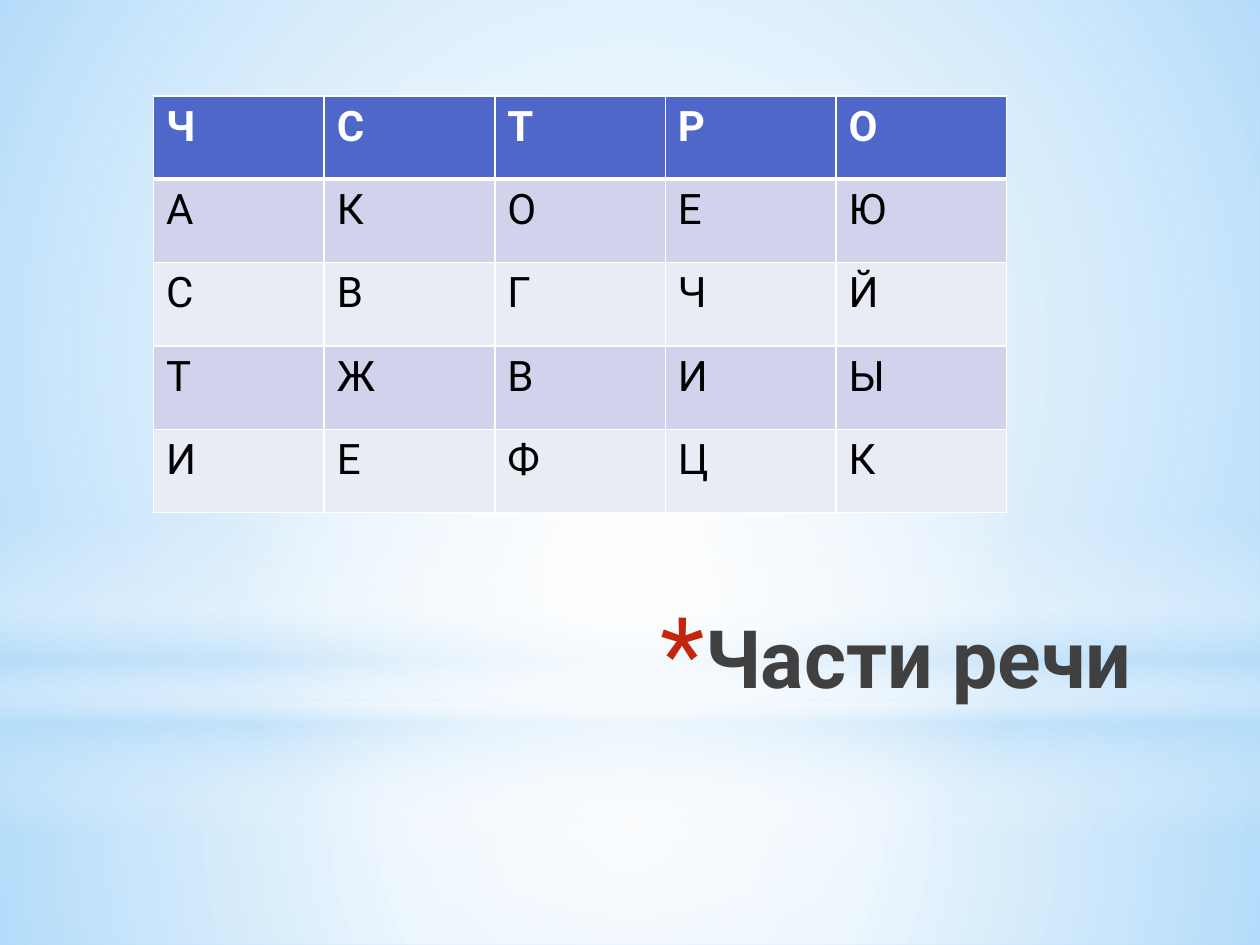
from lxml import etree
from pptx import Presentation
from pptx.dml.color import RGBColor
from pptx.enum import shapes, text
from pptx.oxml import ns
from pptx.util import Pt

LETTERS = ["ЧСТРО", "АКОЕЮ", "СВГЧЙ", "ТЖВИЫ", "ИЕФЦК"]
TITLE = "Части речи"

WHITE = RGBColor(0xFF, 0xFF, 0xFF)
BLACK = RGBColor(0, 0, 0)
SKY = RGBColor(0xB4, 0xDC, 0xFA)
GREY = RGBColor(0x40, 0x40, 0x40)
RED = RGBColor(0xC3, 0x26, 0x0C)
HEADER = RGBColor(0x4E, 0x67, 0xC8)
BANDS = [RGBColor(0xE9, 0xEB, 0xF5), RGBColor(0xD0, 0xD3, 0xEB)]

FONT = "Roboto"
WIDTH, HEIGHT = 720, 540
HORIZON = 401.75
RECT, OVAL = shapes.MSO_SHAPE.RECTANGLE, shapes.MSO_SHAPE.OVAL
# preset, top, height, radial, stops of (position %, colour, opacity %)
BACKDROP = [
    (RECT, HORIZON, HEIGHT - HORIZON, True,
     [(0, WHITE, 91), (37, WHITE, 76), (100, SKY, 79)]),
    (RECT, 0, HORIZON, True,
     [(0, WHITE, 89), (48, WHITE, 62), (100, SKY, 79)]),
    (RECT, 296.64, 180, False,
     [(0, WHITE, 0), (29, WHITE, 30), (45, SKY, 40),
      (55, WHITE, 26), (65, SKY, 60), (100, WHITE, 0)]),
    (OVAL, 126, HORIZON, True, [(0, WHITE, 100), (56, WHITE, 0)]),
]
TABLE_LEFT, TABLE_TOP = 87.75, 54.75
COLUMN_WIDTH, ROW_HEIGHT = 97.5, 47.67


def add(parent, tag, **attributes):
    return etree.SubElement(parent, ns.qn(tag), attributes)


def fill_gradient(shape, stops, radial):
    shape.fill.background()
    properties = shape._element.spPr
    empty = properties.find(ns.qn("a:noFill"))
    gradient = etree.Element(ns.qn("a:gradFill"), rotWithShape="1")
    stop_list = add(gradient, "a:gsLst")
    for position, colour, opacity in stops:
        stop = add(stop_list, "a:gs", pos=str(position * 1000))
        shade = add(stop, "a:srgbClr", val=str(colour))
        add(shade, "a:alpha", val=str(opacity * 1000))
    if radial:
        centre = add(gradient, "a:path", path="circle")
        add(centre, "a:fillToRect", l="50000", t="50000", r="50000", b="50000")
    else:
        add(gradient, "a:lin", ang="5400000", scaled="0")
    properties.replace(empty, gradient)


def write(frame, words, size, colour, bold=False, align=text.PP_ALIGN.LEFT):
    paragraph = frame.paragraphs[0]
    paragraph.alignment = align
    run = paragraph.add_run()
    run.text = words
    run.font.name = FONT
    run.font.size = Pt(size)
    run.font.bold = bold
    run.font.color.rgb = colour
    return paragraph


def add_bullet(paragraph, mark, colour, percent, indent):
    properties = paragraph._p.get_or_add_pPr()
    properties.set("marL", str(Pt(indent)))
    properties.set("indent", str(-Pt(indent)))
    add(add(properties, "a:buClr"), "a:srgbClr", val=str(colour))
    add(properties, "a:buSzPct", val=str(percent * 1000))
    add(properties, "a:buFont", typeface=FONT)
    add(properties, "a:buChar", char=mark)


def draw_borders(cell, **widths):
    properties = cell._tc.get_or_add_tcPr()
    for side in "LRTB":
        line = add(properties, "a:ln" + side, w=str(Pt(widths.get(side, 1))))
        add(add(line, "a:solidFill"), "a:srgbClr", val=str(WHITE))


def main():
    deck = Presentation()
    deck.slide_width, deck.slide_height = Pt(WIDTH), Pt(HEIGHT)
    slide = deck.slides.add_slide(deck.slide_layouts[6])
    slide.background.fill.solid()
    slide.background.fill.fore_color.rgb = SKY

    for preset, top, height, radial, stops in BACKDROP:
        glow = slide.shapes.add_shape(preset, 0, Pt(top), Pt(WIDTH), Pt(height))
        glow.shadow.inherit = False
        glow.line.fill.background()
        fill_gradient(glow, stops, radial)

    title = slide.shapes.add_textbox(Pt(141), Pt(344), Pt(512.75), Pt(90)).text_frame
    title.word_wrap = True
    heading = write(title, TITLE, 46, GREY, bold=True, align=text.PP_ALIGN.RIGHT)
    add_bullet(heading, "*", RED, percent=128, indent=25.2)

    rows, columns = len(LETTERS), len(LETTERS[0])
    grid = slide.shapes.add_table(
        rows, columns, Pt(TABLE_LEFT), Pt(TABLE_TOP),
        Pt(COLUMN_WIDTH * columns), Pt(ROW_HEIGHT * rows)).table
    for column in grid.columns:
        column.width = Pt(COLUMN_WIDTH)
    for r, word in enumerate(LETTERS):
        grid.rows[r].height = Pt(ROW_HEIGHT)
        is_header = r == 0
        for c, letter in enumerate(word):
            cell = grid.cell(r, c)
            draw_borders(cell, T=3 if r == 1 else 1, B=3 if is_header else 1)
            cell.fill.solid()
            cell.fill.fore_color.rgb = HEADER if is_header else BANDS[r % 2]
            write(cell.text_frame, letter, 24,
                  WHITE if is_header else BLACK, bold=is_header)

    deck.save("out.pptx")


if __name__ == "__main__":
    main()
